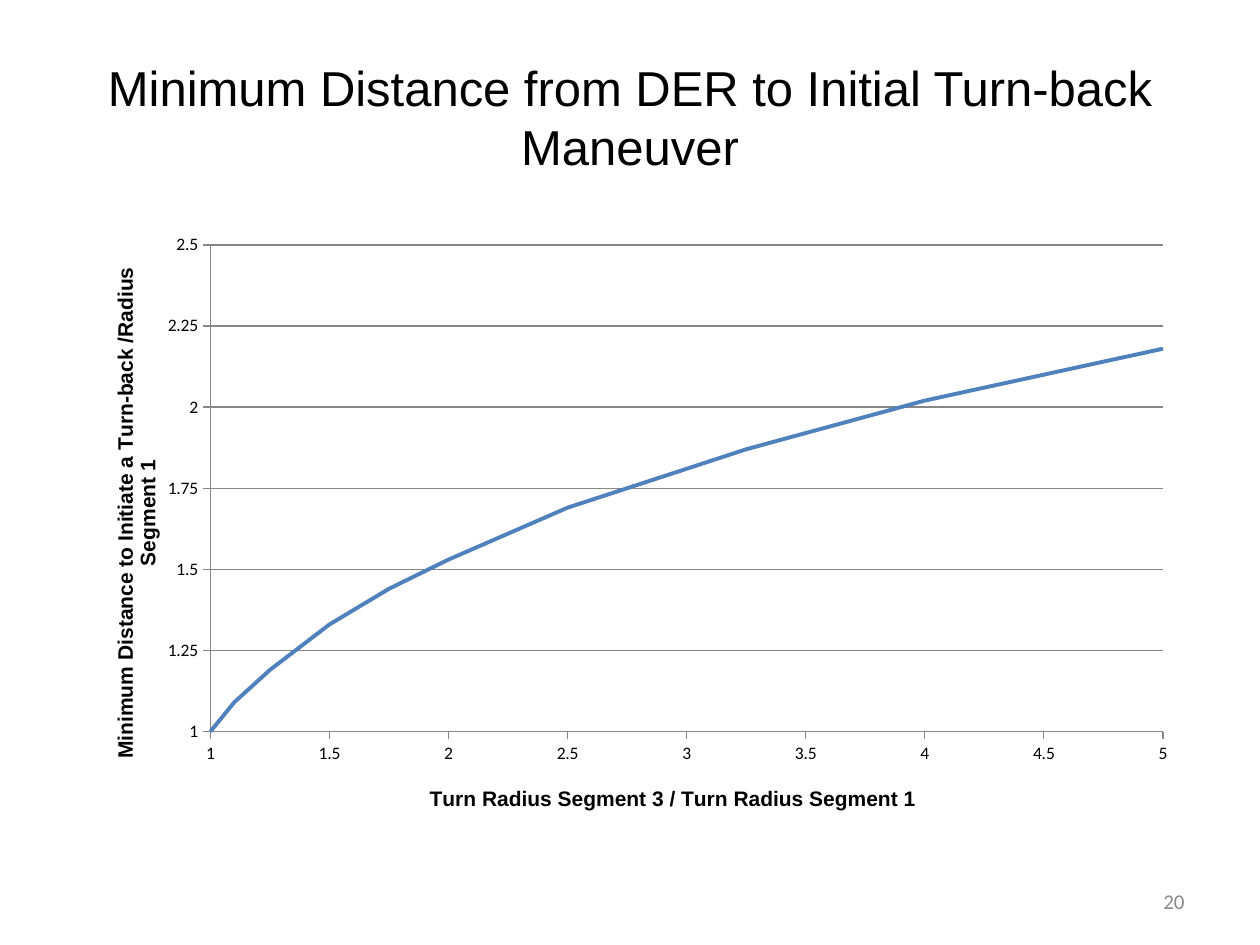
from lxml import etree
from pptx import Presentation
from pptx.chart.data import XyChartData
from pptx.dml.color import RGBColor
from pptx.enum.chart import XL_CHART_TYPE, XL_TICK_MARK
from pptx.enum.text import MSO_ANCHOR, PP_ALIGN
from pptx.oxml.ns import qn
from pptx.util import Emu, Pt

SCATTER = XL_CHART_TYPE.XY_SCATTER_SMOOTH_NO_MARKERS
OUTSIDE, NO_TICK = XL_TICK_MARK.OUTSIDE, XL_TICK_MARK.NONE
MIDDLE = MSO_ANCHOR.MIDDLE
CENTER, RIGHT = PP_ALIGN.CENTER, PP_ALIGN.RIGHT
BLACK = RGBColor(0x00, 0x00, 0x00)
GRAY = RGBColor(0x89, 0x89, 0x89)
RULE = RGBColor(0x86, 0x86, 0x86)
BLUE = RGBColor(0x4F, 0x81, 0xBD)
SCALE = 914400 // 126

RATIOS = [1, 1.1] + [1 + step / 4 for step in range(1, 17)]
DISTANCES = [1, 1.09, 1.19, 1.33, 1.44, 1.53, 1.61, 1.69, 1.75,
             1.81, 1.87, 1.92, 1.97, 2.02, 2.06, 2.1, 2.14, 2.18]


def px(*sizes):
    """Turn whole pixels into EMU lengths."""
    return [Emu(size * SCALE) for size in sizes]


def style(font, face, size, color, bold=False):
    """Set the look of a font."""
    font.name, font.size, font.bold = face, Pt(size), bold
    font.color.rgb = color


def write(frame, text, face, size, color, align):
    """Fill a text frame with one formatted run."""
    frame.word_wrap = True
    frame.vertical_anchor = MIDDLE
    para = frame.paragraphs[0]
    para.alignment = align
    run = para.add_run()
    run.text = text
    style(run.font, face, size, color)


def add_title(slide, text, box):
    """Move and fill the title placeholder."""
    title = slide.shapes.title
    title.left, title.top, title.width, title.height = px(*box)
    write(title.text_frame, text, "Arial", 28, BLACK, CENTER)


def add_number(slide, text, box):
    """Add the page number in a text box."""
    shape = slide.shapes.add_textbox(*px(*box))
    write(shape.text_frame, text, "Calibri", 12, GRAY, RIGHT)


def place(parent, index, **parts):
    """Give a chart part a manual layout."""
    for old in parent.findall(qn("c:layout")):
        parent.remove(old)
    layout = etree.Element(qn("c:layout"))
    manual = etree.SubElement(layout, qn("c:manualLayout"))
    for name, value in parts.items():
        etree.SubElement(manual, qn(f"c:{name}")).set("val", str(value))
    parent.insert(index, layout)


def set_axis(axis, text, top, step, left, height):
    """Scale an axis from one and give it a placed title."""
    axis.minimum_scale, axis.maximum_scale = 1, top
    axis.major_unit = step
    axis.major_tick_mark, axis.minor_tick_mark = OUTSIDE, NO_TICK
    axis.format.line.color.rgb = RULE
    axis.format.line.width = Pt(0.75)
    axis.tick_labels.number_format = "General"
    axis.tick_labels.number_format_is_linked = False
    style(axis.tick_labels.font, "Calibri", 10, BLACK)
    title = axis.axis_title
    run = title.text_frame.paragraphs[0].add_run()
    run.text = text
    style(run.font, "Arial", 12, BLACK, True)
    place(title._element, 1, xMode="edge", yMode="edge", x=left, y=height)


def add_curve(slide, box):
    """Add the scatter chart of turn-back distance."""
    data = XyChartData()
    points = data.add_series("Series 1")
    for ratio, reach in zip(RATIOS, DISTANCES):
        points.add_data_point(ratio, reach)
    chart = slide.shapes.add_chart(SCATTER, *px(*box), data).chart
    chart.has_legend = chart.has_title = False
    style(chart.font, "Calibri", 10, BLACK)
    across, up = chart.category_axis, chart.value_axis
    set_axis(across, "Turn Radius Segment 3 / Turn Radius Segment 1",
             5, 0.5, 0.32, 0.9)
    set_axis(up, "Minimum Distance to Initiate a Turn-back /Radius Segment 1",
             2.5, 0.25, 0.04, 0.07)
    across.has_major_gridlines = False
    up.has_major_gridlines = True
    grid = up.major_gridlines.format.line
    grid.color.rgb, grid.width = RULE, Pt(0.75)
    plot = chart.plots[0]
    plot.vary_by_categories = False
    curve = plot.series[0]
    curve.smooth = True
    curve.format.line.color.rgb = BLUE
    curve.format.line.width = Pt(2.25)
    area = chart._chartSpace.find(".//" + qn("c:plotArea"))
    place(area, 0, layoutTarget="inner", xMode="edge", yMode="edge",
          x=0.13, y=0.04, w=0.84, h=0.78)


def main():
    """Build and save the slide."""
    deck = Presentation()
    deck.slide_width, deck.slide_height = px(1260, 945)
    slide = deck.slides.add_slide(deck.slide_layouts[5])
    add_title(slide, "Minimum Distance from DER to Initial Turn-back Maneuver",
              (63, 38, 1134, 157))
    add_curve(slide, (63, 220, 1134, 624))
    add_number(slide, "20", (903, 876, 294, 50))
    deck.save("out.pptx")


if __name__ == "__main__":
    main()
